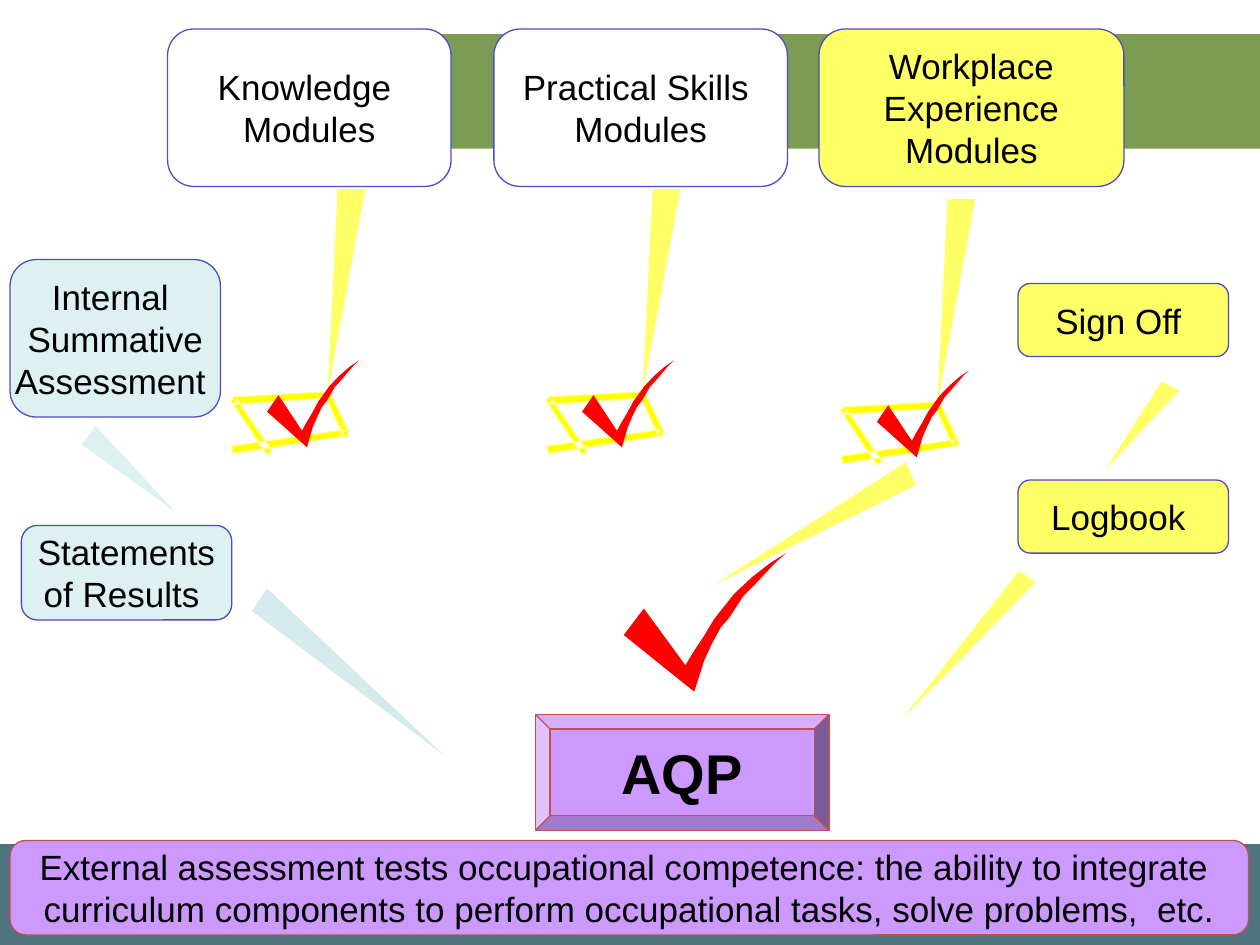
from pptx import Presentation
from pptx.dml.color import RGBColor
from pptx.enum.shapes import MSO_SHAPE
from pptx.enum.text import MSO_ANCHOR, PP_ALIGN
from pptx.util import Inches, Pt

RECT, ROUND, BEVEL = MSO_SHAPE.RECTANGLE, MSO_SHAPE.ROUNDED_RECTANGLE, MSO_SHAPE.BEVEL
MIDDLE, CENTER = MSO_ANCHOR.MIDDLE, PP_ALIGN.CENTER
BLUE, RED, PURPLE = "4C4CC4", "C0504D", "CC99FF"
YELLOW, PALE, WHITE = "FFFF66", "DEF1F2", "FFFFFF"

BANDS = [((0, 6.7, 10, 0.8), "4F737F"), ((2.84, 0.27, 7.16, 0.91), "7B9C52")]

BOXES = [
    ((0.08, 6.67, 9.83, 0.75), PURPLE, RED,
     ["External assessment tests occupational competence: the ability to integrate ",
      "curriculum components to perform occupational tasks, solve problems,  etc."]),
    ((1.33, 0.23, 2.25, 1.25), WHITE, BLUE, ["Knowledge ", "Modules"]),
    ((3.92, 0.23, 2.33, 1.25), WHITE, BLUE, ["Practical Skills ", "Modules"]),
    ((6.5, 0.23, 2.42, 1.25), YELLOW, BLUE, ["Workplace", " Experience ", "Modules"]),
    ((0.08, 2.06, 1.67, 1.25), PALE, BLUE, ["Internal ", "Summative", "Assessment "]),
    ((0.17, 4.17, 1.67, 0.75), PALE, BLUE, ["Statements", "of Results "]),
    ((8.08, 2.25, 1.67, 0.58), YELLOW, BLUE, ["Sign Off "]),
    ((8.08, 3.81, 1.67, 0.58), YELLOW, BLUE, ["Logbook "]),
]

WEDGES = [
    ([(7.19, 3.67), (7.27, 3.85), (5.67, 4.64)], YELLOW),
    ([(9.22, 3.03), (9.36, 3.1), (8.77, 3.73)], YELLOW),
    ([(8.09, 4.53), (8.22, 4.62), (7.16, 5.71)], YELLOW),
    ([(0.65, 3.53), (0.76, 3.38), (1.39, 4.06)], PALE),
    ([(2, 4.85), (2.12, 4.67), (3.52, 5.99)], "D3EBED"),
]

TICK = [(0.56, 1.1), (0.64, 0.85), (0.7, 0.72), (0.77, 0.59), (0.84, 0.51),
        (0.95, 0.34), (1.04, 0.25), (1.21, 0.07), (1.29, 0), (1.16, 0.08),
        (1.02, 0.19), (0.88, 0.32), (0.72, 0.52), (0.63, 0.67), (0.55, 0.79),
        (0.49, 0.89), (0.16, 0.44), (0, 0.65)]
FRAME = [(0.01, 0.44), (0.91, 0.31), (0.89, 0.35), (0.75, 0.04), (0.77, 0.06),
         (0.03, 0.11), (0.05, 0.07), (0.33, 0.48), (0.29, 0.51), (0.01, 0.09),
         (0, 0.08), (0.01, 0.07), (0.03, 0.05), (0.77, 0.01), (0.79, 0.02),
         (0.94, 0.33), (0.93, 0.35), (0.92, 0.36), (0.02, 0.5)]
SPIKE = [(0.85, -1.6), (1.07, -1.6), (0.77, 0.02)]
MARKS = [(1.83, 3.1), (4.33, 3.1), (6.67, 3.18)]
SMALL = (0.73 / 1.29, 0.69 / 1.1)


def paint(shape, fill, line=None, width=0.75):
    shape.shadow.inherit = False
    shape.fill.solid()
    shape.fill.fore_color.rgb = RGBColor.from_string(fill)
    if line:
        shape.line.color.rgb = RGBColor.from_string(line)
        shape.line.width = Pt(width)
    else:
        shape.line.fill.background()


def block(kind, area, fill, line=None, adj=None):
    shape = shapes.add_shape(kind, *map(Inches, area))
    paint(shape, fill, line)
    if adj:
        shape.adjustments[0] = adj
    return shape


def write(shape, lines, size=20, bold=False, color="000000"):
    frame = shape.text_frame
    frame.word_wrap = False
    frame.vertical_anchor = MIDDLE
    for i, text in enumerate(lines):
        para = frame.add_paragraph() if i else frame.paragraphs[0]
        para.alignment = CENTER
        run = para.add_run()
        run.text = text
        run.font.name = "Arial"
        run.font.size = Pt(size)
        run.font.bold = bold
        run.font.color.rgb = RGBColor.from_string(color)


def outline(points, fill, at=(0, 0), scale=(1, 1), line=None):
    spots = [tuple(Inches(a + p * s) for a, p, s in zip(at, point, scale))
             for point in points]
    pen = shapes.build_freeform(*spots[0])
    pen.add_line_segments(spots[1:], close=True)
    paint(pen.convert_to_shape(), fill, line, 0)


deck = Presentation()
deck.slide_width, deck.slide_height = Inches(10), Inches(7.5)
shapes = deck.slides.add_slide(deck.slide_layouts[6]).shapes

for area, fill in BANDS:
    block(RECT, area, fill)
for area, fill, line, lines in BOXES:
    write(block(ROUND, area, fill, line, 0.167), lines)
write(block(BEVEL, (4.25, 5.67, 2.33, 0.92), PURPLE, RED, 0.125), ["AQP"], size=32, bold=True)

outline(TICK, "FF0000", (4.95, 4.39))
for points, fill in WEDGES:
    outline(points, fill)
for x, y in MARKS:
    outline(FRAME, "FFFF00", (x, y), line="FFFF99")
    outline(SPIKE, YELLOW, (x, y))
    outline(TICK, "FF0000", (x + 0.29, y - 0.24), SMALL)

deck.save("out.pptx")
